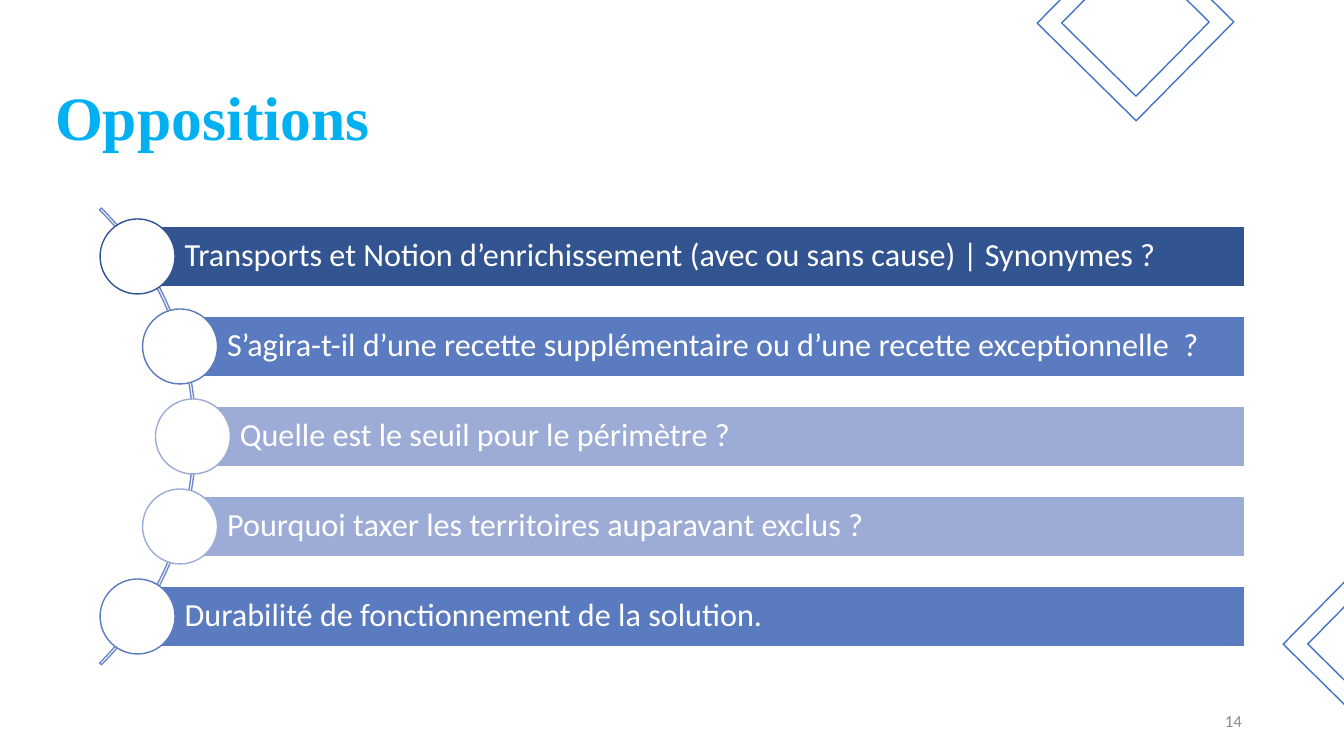
import math

import pptx
import pptx.dml.color
import pptx.enum.shapes
import pptx.enum.text
import pptx.util

PX = 9144000 / 1008  # EMU per px, at 100.8 px to the inch
SHAPE = pptx.enum.shapes.MSO_SHAPE
ALIGN = pptx.enum.text.PP_ALIGN
MIDDLE = pptx.enum.text.MSO_ANCHOR.MIDDLE

QUESTIONS = [
    ("Transports et Notion d’enrichissement (avec ou sans cause) | Synonymes ?", "325491"),
    ("S’agira-t-il d’une recette supplémentaire ou d’une recette exceptionnelle  ?", "5B7BC0"),
    ("Quelle est le seuil pour le périmètre ?", "9DACD6"),
    ("Pourquoi taxer les territoires auparavant exclus ?", "9DACD6"),
    ("Durabilité de fonctionnement de la solution.", "5B7BC0"),
]


def px(length):
    return pptx.util.Emu(round(length * PX))


def color(hex_code):
    return pptx.dml.color.RGBColor.from_string(hex_code)


def add_outline(page, kind, box, line, fill=None):
    shape = page.shapes.add_shape(kind, *map(px, box))
    shape.shadow.inherit = False
    if fill:
        shape.fill.solid()
        shape.fill.fore_color.rgb = color(fill)
    else:
        shape.fill.background()
    shape.line.color.rgb = color(line)
    shape.line.width = pptx.util.Pt(1)
    return shape


def write(shape, text, size, hex_code, font="Calibri", bold=False,
          align=ALIGN.LEFT, spacing=0.9, insets=(10, 5, 10, 5)):
    frame = shape.text_frame
    frame.word_wrap = True
    frame.auto_size = pptx.enum.text.MSO_AUTO_SIZE.NONE
    frame.vertical_anchor = MIDDLE
    (frame.margin_left, frame.margin_top,
     frame.margin_right, frame.margin_bottom) = map(px, insets)
    para = frame.paragraphs[0]
    para.alignment = align
    para.line_spacing = spacing
    span = para.add_run()
    span.text = text
    span.font.name = font
    span.font.size = pptx.util.Pt(size)
    span.font.bold = bold
    span.font.color.rgb = color(hex_code)


def add_title(page, box):
    title = page.shapes.title
    title.left, title.top, title.width, title.height = map(px, box)
    write(title, "Oppositions", 44, "00B0F0", font="Times New Roman", bold=True)


def add_page_number(page, box):
    number = page.shapes.add_textbox(*map(px, box))
    write(number, "14", 12, "8C8C8C", align=ALIGN.RIGHT, spacing=1.0)


def add_curved_list(page, box):
    """Bars whose round markers sit on an arc bulging from the left of the box."""
    left, top, width, height = box
    right, middle = left + width, top + height / 2
    arc_size, orbit, pitch, bar_height, dot = 646, 320, 90, 60, 75
    center = left - 227

    # Arc behind the markers
    arc = add_outline(page, SHAPE.BLOCK_ARC,
                      (center - arc_size / 2, middle - arc_size / 2, arc_size, arc_size),
                      "6D89CB")
    for index, value in enumerate((189, 27, 0.004)):
        arc.adjustments[index] = value

    # Bars and markers
    for index, (question, hex_code) in enumerate(QUESTIONS):
        offset = (index - (len(QUESTIONS) - 1) / 2) * pitch
        x, y = center + math.sqrt(orbit ** 2 - offset ** 2), middle + offset
        bar = add_outline(page, SHAPE.RECTANGLE,
                          (x, y - bar_height / 2, right - x, bar_height),
                          "FFFFFF", hex_code)
        write(bar, question, 23, "FFFFFF", insets=(47, 6, 6, 6))
        add_outline(page, SHAPE.OVAL, (x - dot / 2, y - dot / 2, dot, dot),
                    hex_code, "FFFFFF")


def add_diamond(page, box):
    diamond = add_outline(page, SHAPE.FRAME, box, "4472C4")
    diamond.rotation = 314.6


def main():
    deck = pptx.Presentation()
    deck.slide_width, deck.slide_height = px(1344), px(756)
    page = deck.slides.add_slide(deck.slide_layouts[5])
    add_title(page, (45, 45, 741, 151))
    add_page_number(page, (950, 701, 302, 40))
    add_curved_list(page, (100, 208, 1145, 457))
    for left, top in ((1066, -47), (1312, 574)):
        add_diamond(page, (left, top, 139, 139))
    deck.save("out.pptx")


if __name__ == "__main__":
    main()
